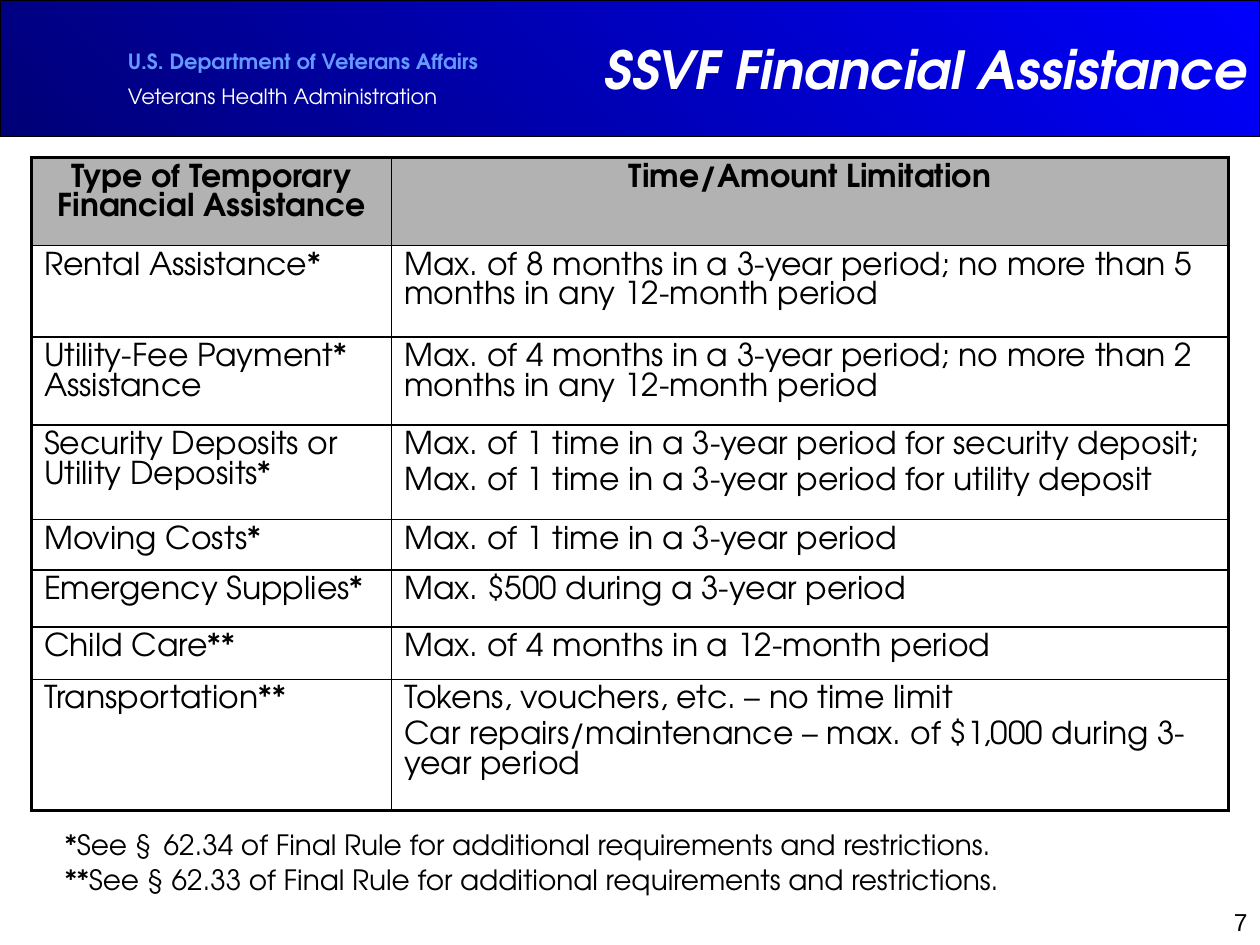
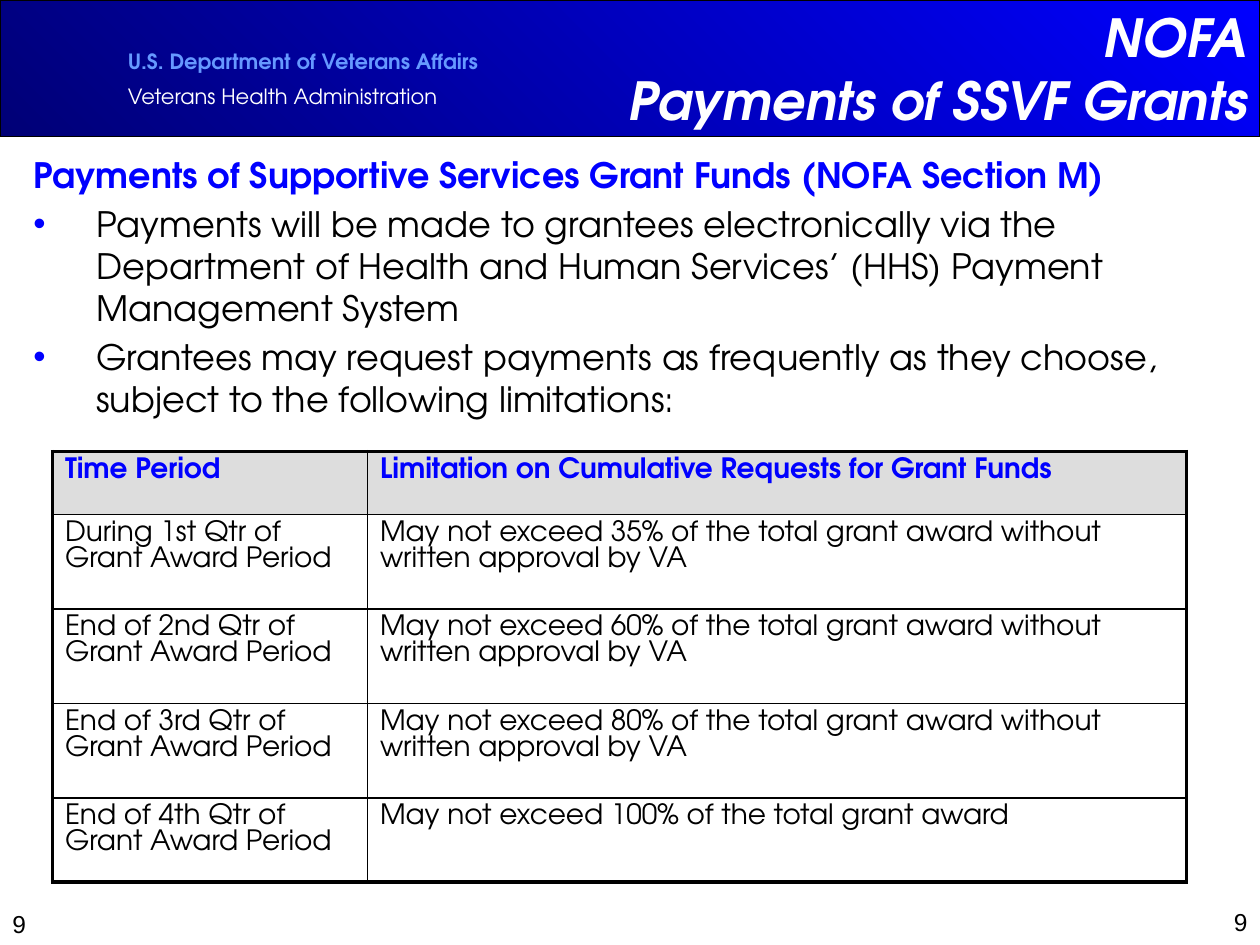
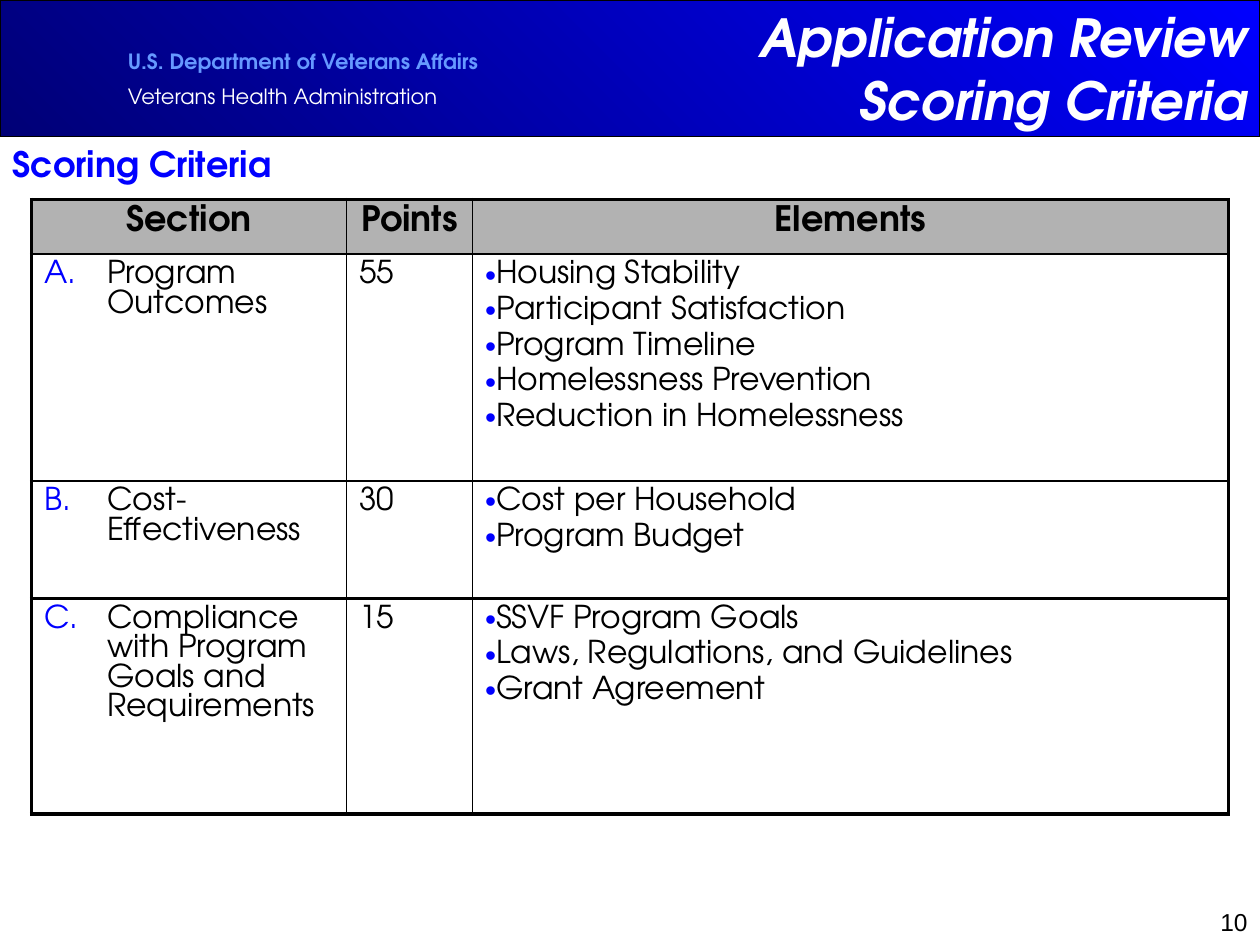
from lxml.etree import SubElement
from pptx import Presentation
from pptx.dml.color import RGBColor
from pptx.enum.shapes import MSO_SHAPE
from pptx.enum.text import MSO_ANCHOR, MSO_AUTO_SIZE, PP_ALIGN
from pptx.oxml.ns import qn
from pptx.util import Inches, Pt

# Shared style
BLACK = RGBColor(0x00, 0x00, 0x00)
WHITE = RGBColor(0xFF, 0xFF, 0xFF)
BLUE = RGBColor(0x00, 0x00, 0xFF)
NAVY = RGBColor(0x00, 0x00, 0x76)
SKY = RGBColor(0x66, 0x99, 0xFF)
GRAY = RGBColor(0xB2, 0xB2, 0xB2)
PALE_GRAY = RGBColor(0xDD, 0xDD, 0xDD)
HEAD_FONT = "TeX Gyre Adventor"
NUMBER_FONT = "Arial"
OUTER_LINE = 2.25

# The slide is a grid of 120 columns by 90 rows
COLUMNS, ROWS = 120, 90
WIDTH, HEIGHT = Inches(10), Inches(7.5)
BAND_ROWS = 13


def across(columns):
    return round(WIDTH * columns / COLUMNS)


def down(rows):
    return round(HEIGHT * rows / ROWS)


def area(left, top, columns, rows):
    return across(left), down(top), across(columns), down(rows)


def mark(paragraph, bullet, number, hang):
    """Set the hanging indent and the blue bullet or letter of a paragraph."""
    properties = paragraph._p.get_or_add_pPr()
    properties.set("marL", str(across(hang)))
    properties.set("indent", str(-across(hang)))
    if bullet or number:
        SubElement(SubElement(properties, qn("a:buClr")), qn("a:srgbClr"), val=str(BLUE))
    if bullet:
        SubElement(properties, qn("a:buFont"), typeface=NUMBER_FONT)
        SubElement(properties, qn("a:buChar"), char=bullet)
    elif number:
        SubElement(properties, qn("a:buAutoNum"), type="alphaUcPeriod", startAt=str(number))
    else:
        SubElement(properties, qn("a:buNone"))


def write(frame, *lines, size=18, color=BLACK, bold=False, italic=False, font=HEAD_FONT,
          align=PP_ALIGN.LEFT, spacing=1.0, before=0, bullet=None, number=None, hang=0):
    """Append paragraphs; a line is a string or a tuple of (string, size) parts."""
    for line in lines:
        first = len(frame.paragraphs) == 1 and not frame.paragraphs[0].runs
        paragraph = frame.paragraphs[0] if first else frame.add_paragraph()
        mark(paragraph, bullet, number, hang)
        paragraph.alignment = align
        paragraph.line_spacing = spacing
        paragraph.space_before = Pt(0 if first else before)
        parts = line if isinstance(line, tuple) else ((line, size),)
        for text, part_size in parts:
            run = paragraph.add_run()
            run.text = text
            run.font.name = font
            run.font.size = Pt(part_size)
            run.font.bold = bold
            run.font.italic = italic
            run.font.color.rgb = color


def border(cell, side, points):
    line = SubElement(cell._tc.get_or_add_tcPr(), qn(f"a:ln{side}"), w=str(Pt(points)))
    SubElement(SubElement(line, qn("a:solidFill")), qn("a:srgbClr"), val=str(BLACK))


class Deck:
    def __init__(self):
        self.presentation = Presentation()
        self.presentation.slide_width = WIDTH
        self.presentation.slide_height = HEIGHT
        self.slide = None

    def start(self, page, *title_lines):
        """Add a slide with its band, department name, page number and title."""
        layout = self.presentation.slide_layouts[5]
        self.slide = self.presentation.slides.add_slide(layout)
        self.band()
        department = self.box(11, 4, 48, 7.2)
        write(department, "U.S. Department of Veterans Affairs", size=12, color=SKY, bold=True)
        write(department, "Veterans Health Administration", size=12, color=WHITE, before=6)
        self.page_number(page, 95, 85.8, 25, PP_ALIGN.RIGHT)
        self.title(title_lines)

    def band(self):
        band = self.slide.shapes.add_shape(MSO_SHAPE.RECTANGLE, *area(0, 0, COLUMNS, BAND_ROWS))
        band.shadow.inherit = False
        band.fill.gradient()
        band.fill.gradient_angle = 45
        for stop, color, position in zip(band.fill.gradient_stops, (NAVY, BLUE), (0, 1)):
            stop.color.rgb = color
            stop.position = position
        band.line.color.rgb = BLACK
        band.line.width = Pt(0.75)

    def title(self, lines):
        title = self.slide.shapes.title
        title.left, title.top, title.width, title.height = area(48, 0, 72, BAND_ROWS)
        self.slide.shapes._spTree.append(title._element)  # in front of the band
        frame = title.text_frame
        frame.word_wrap = True
        frame.auto_size = MSO_AUTO_SIZE.NONE
        frame.vertical_anchor = MSO_ANCHOR.MIDDLE
        write(frame, *lines, size=30, color=WHITE, bold=True, italic=True, align=PP_ALIGN.RIGHT)

    def box(self, left, top, columns, rows):
        frame = self.slide.shapes.add_textbox(*area(left, top, columns, rows)).text_frame
        frame.word_wrap = True
        return frame

    def page_number(self, page, left, top, columns, align):
        write(self.box(left, top, columns, 6), page, size=14, font=NUMBER_FONT, align=align)

    def table(self, left, top, widths, heights, header, rows, header_style,
              header_fill=GRAY, size=18, rule=1):
        """Each body cell is a string, or a (lines, format) pair."""
        place = area(left, top, sum(widths), sum(heights))
        table = self.slide.shapes.add_table(len(heights), len(widths), *place).table
        table.first_row = table.horz_banding = False
        for column, width in zip(table.columns, widths):
            column.width = across(width)
        for row, height in zip(table.rows, heights):
            row.height = down(height)
        last_row, last_column = len(heights) - 1, len(widths) - 1
        for r, values in enumerate([header, *rows]):
            for c, value in enumerate(values):
                cell = table.cell(r, c)
                border(cell, "L", OUTER_LINE if c == 0 else 1)
                border(cell, "R", OUTER_LINE if c == last_column else 1)
                border(cell, "T", OUTER_LINE if r == 0 else rule)
                border(cell, "B", OUTER_LINE if r == last_row else rule)
                lines, style = value if isinstance(value, tuple) else ([value], {})
                if r == 0:
                    cell.fill.solid()
                    cell.fill.fore_color.rgb = header_fill
                    style = {"bold": True, **header_style}
                else:
                    cell.fill.background()
                write(cell.text_frame, *lines, **{"size": size, "before": 3.6, **style})


def financial_assistance(deck):
    deck.start("7", "SSVF Financial Assistance")
    deposits = ["Max. of 1 time in a 3-year period for security deposit;",
                "Max. of 1 time in a 3-year period for utility deposit"]
    transport = ["Tokens, vouchers, etc. – no time limit",
                 "Car repairs/maintenance – max. of $1,000 during 3-year period"]
    monthly = "Max. of {} months in a 3-year period; no more than {} months in any 12-month period"
    deck.table(
        3, 15, [34.3, 79.7], [8.4, 8.7, 8.4, 9, 4.8, 5.4, 5, 12.5],
        ["Type of Temporary Financial Assistance", "Time/Amount Limitation"],
        [["Rental Assistance*", monthly.format(8, 5)],
         ["Utility-Fee Payment* Assistance", monthly.format(4, 2)],
         ["Security Deposits or Utility Deposits*", (deposits, {})],
         ["Moving Costs*", "Max. of 1 time in a 3-year period"],
         ["Emergency Supplies*", "Max. $500 during a 3-year period"],
         ["Child Care**", "Max. of 4 months in a 12-month period"],
         ["Transportation**", (transport, {})]],
        {"align": PP_ALIGN.CENTER})
    # Footnotes
    ending = "of Final Rule for additional requirements and restrictions."
    write(deck.box(5, 78, 112, 8),
          (("*See §", 16), (" ", 24), (f"62.34 {ending}", 16)),
          f"**See § 62.33 {ending}", size=16, spacing=0.75, before=4)


def grant_payments(deck):
    deck.start("9", "NOFA", "Payments of SSVF Grants")
    deck.page_number("9", 0, 86, 38, PP_ALIGN.LEFT)
    # Payment rules
    payments = deck.box(2, 14, 118, 71)
    write(payments, "Payments of Supportive Services Grant Funds (NOFA Section M)",
          size=20, color=BLUE, bold=True, hang=6)
    write(payments,
          "Payments will be made to grantees electronically via the Department of Health "
          "and Human Services’ (HHS) Payment Management System",
          "Grantees may request payments as frequently as they choose, subject to the "
          "following limitations:",
          size=20, before=4, bullet="•", hang=6)
    # Limits by quarter
    limits = [("During 1st", "35% of the total grant award without written approval by VA"),
              ("End of 2nd", "60% of the total grant award without written approval by VA"),
              ("End of 3rd", "80% of the total grant award without written approval by VA"),
              ("End of 4th", "100% of the total grant award")]
    deck.table(
        5, 43, [30, 78], [6, 9, 9, 9, 8],
        ["Time Period", "Limitation on Cumulative Requests for Grant Funds"],
        [[f"{quarter} Qtr of Grant Award Period", f"May not exceed {limit}"]
         for quarter, limit in limits],
        {"color": BLUE}, header_fill=PALE_GRAY, size=16)


def scoring_criteria(deck):
    deck.start("10", "Application Review", "Scoring Criteria")
    write(deck.box(0, 13, 117, 67), "Scoring Criteria", size=20, color=BLUE, bold=True)
    criteria = [
        ("Program Outcomes", "55",
         ["Housing Stability", "Participant Satisfaction", "Program Timeline",
          "Homelessness Prevention", "Reduction in Homelessness"]),
        ("Cost-Effectiveness", "30", ["Cost per Household", "Program Budget"]),
        ("Compliance with Program Goals and Requirements", "15",
         ["SSVF Program Goals", "Laws, Regulations, and Guidelines", "Grant Agreement"]),
    ]
    deck.table(
        3, 19, [30, 12, 72], [5.2, 21.6, 11.2, 20.5],
        ["Section", "Points", "Elements"],
        [[([section], {"number": letter, "hang": 6}), points, (elements, {"bullet": "•"})]
         for letter, (section, points, elements) in enumerate(criteria, start=1)],
        {"size": 20, "align": PP_ALIGN.CENTER}, rule=1.5)


def main():
    deck = Deck()
    financial_assistance(deck)
    grant_payments(deck)
    scoring_criteria(deck)
    deck.presentation.save("out.pptx")


if __name__ == "__main__":
    main()
